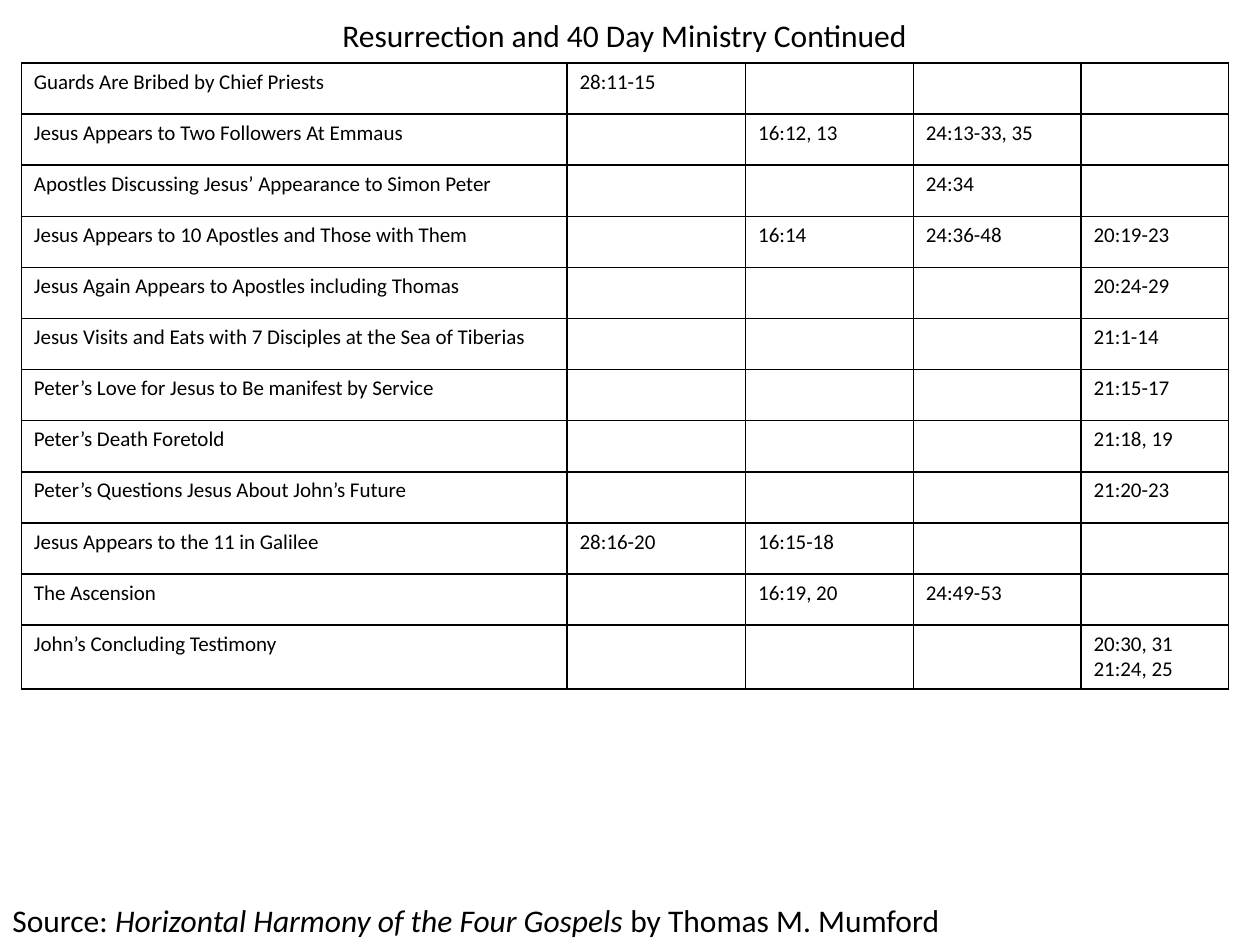
from lxml import etree
from pptx import Presentation
from pptx.dml.color import RGBColor
from pptx.enum.text import MSO_AUTO_SIZE, PP_ALIGN
from pptx.oxml.ns import qn
from pptx.util import Cm, Pt

LEFT, CENTER = PP_ALIGN.LEFT, PP_ALIGN.CENTER
FIT_SHAPE = MSO_AUTO_SIZE.SHAPE_TO_FIT_TEXT
FONT = "Calibri"
BLACK = "000000"
COL_WIDTHS = [11, 3.6, 3.38, 3.38, 2.97]
ROW_HEIGHT, LAST_ROW_HEIGHT = 1.03, 1.25
EVENTS = [
    ("Guards Are Bribed by Chief Priests", "28:11-15", "", "", ""),
    ("Jesus Appears to Two Followers At Emmaus", "", "16:12, 13", "24:13-33, 35", ""),
    ("Apostles Discussing Jesus’ Appearance to Simon Peter", "", "", "24:34", ""),
    ("Jesus Appears to 10 Apostles and Those with Them", "", "16:14", "24:36-48", "20:19-23"),
    ("Jesus Again Appears to Apostles including Thomas", "", "", "", "20:24-29"),
    ("Jesus Visits and Eats with 7 Disciples at the Sea of Tiberias", "", "", "", "21:1-14"),
    ("Peter’s Love for Jesus to Be manifest by Service", "", "", "", "21:15-17"),
    ("Peter’s Death Foretold", "", "", "", "21:18, 19"),
    ("Peter’s Questions Jesus About John’s Future", "", "", "", "21:20-23"),
    ("Jesus Appears to the 11 in Galilee", "28:16-20", "16:15-18", "", ""),
    ("The Ascension", "", "16:19, 20", "24:49-53", ""),
    ("John’s Concluding Testimony", "", "", "", "20:30, 31\n21:24, 25"),
]


def color(value):
    """Turn a hex string into a colour."""
    return RGBColor.from_string(value)


def format_run(r, size, italic=False):
    """Apply the slide's font to a run."""
    r.font.name = FONT
    r.font.size = Pt(size)
    r.font.italic = italic
    r.font.color.rgb = color(BLACK)


def add_borders(cell):
    """Draw a thin line on each side of a cell."""
    tcPr = cell._tc.get_or_add_tcPr()
    for i, side in enumerate(("a:lnL", "a:lnR", "a:lnT", "a:lnB")):
        ln = etree.Element(qn(side), w=str(Pt(1)))
        fill = etree.SubElement(ln, qn("a:solidFill"))
        etree.SubElement(fill, qn("a:srgbClr"), val=BLACK)
        tcPr.insert(i, ln)


def add_text(s, left, top, width, height, parts, align=LEFT):
    """Place a line of text made of (text, italic) parts."""
    sp = s.shapes.add_textbox(Cm(left), Cm(top), Cm(width), Cm(height))
    tf = sp.text_frame
    tf.word_wrap = True
    tf.auto_size = FIT_SHAPE
    p = tf.paragraphs[0]
    p.alignment = align
    for text, italic in parts:
        r = p.add_run()
        r.text = text
        format_run(r, 18, italic)


def add_harmony_table(s, left, top):
    """Place the table of events and Gospel references."""
    heights = [ROW_HEIGHT] * (len(EVENTS) - 1) + [LAST_ROW_HEIGHT]
    table = s.shapes.add_table(
        len(EVENTS), len(COL_WIDTHS), Cm(left), Cm(top),
        Cm(sum(COL_WIDTHS)), Cm(sum(heights))).table
    table.first_row = table.horz_banding = False
    for column, width in zip(table.columns, COL_WIDTHS):
        column.width = Cm(width)
    for row, height, event in zip(table.rows, heights, EVENTS):
        row.height = Cm(height)
        for cell, text in zip(row.cells, event):
            cell.fill.background()
            add_borders(cell)
            cell.text_frame.text = text
            for p in cell.text_frame.paragraphs:
                for r in p.runs:
                    format_run(r, 12)


def main():
    """Build and save the slide."""
    prs = Presentation()
    prs.slide_width, prs.slide_height = Cm(25.4), Cm(19.05)
    s = prs.slides.add_slide(prs.slide_layouts[6])
    add_harmony_table(s, 0.43, 1.27)
    add_text(s, 0.43, 0.2, sum(COL_WIDTHS), 1.03,
             [("Resurrection and 40 Day Ministry Continued", False)], CENTER)
    add_text(s, 0, 18.03, 21.8, 1.03, [
        ("Source: ", False),
        ("Horizontal Harmony of the Four Gospels ", True),
        ("by Thomas M. Mumford", False),
    ])
    prs.save("out.pptx")


if __name__ == "__main__":
    main()
